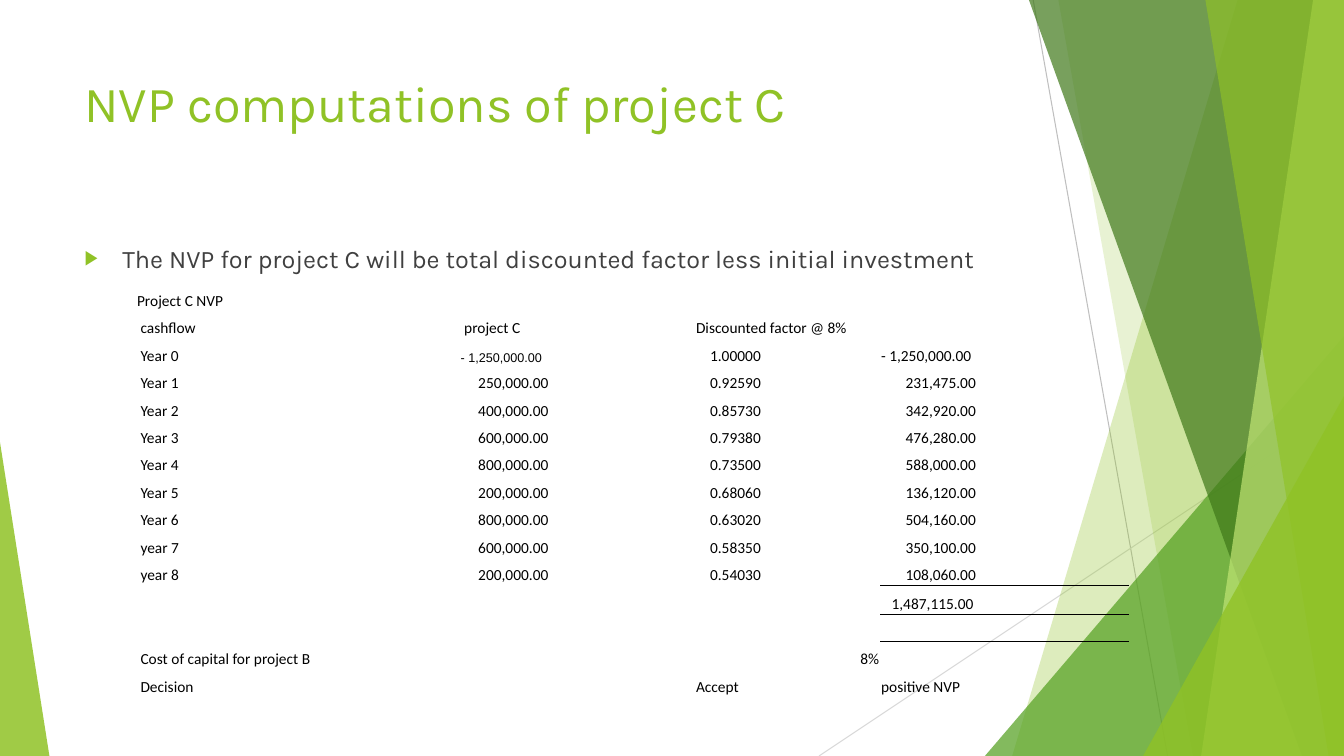
from lxml.etree import SubElement
from pptx import Presentation
from pptx.dml.color import RGBColor
from pptx.enum.shapes import MSO_CONNECTOR as CONN, MSO_SHAPE as SHAPE
from pptx.enum.text import MSO_ANCHOR as ANCHOR, PP_ALIGN as ALIGN
from pptx.oxml.ns import qn
from pptx.util import Pt

COLORS = {
    "lime": "90C226", "green": "54A021", "forest": "3F7819", "pale": "C0E474",
    "text": "404040", "black": "000000", "line": "BFBFBF", "soft_line": "D9D9D9",
}
W, H = 960, 540
NO_GRID = "{2D5ABB26-0587-4C30-8999-92F81FD0307C}"
SPACE = 2.5


class SlideBuilder:
    def __init__(self, prs, font="Karla", table_font="Calibri"):
        self.slide = prs.slides.add_slide(prs.slide_layouts[6])
        self.shapes = self.slide.shapes
        self.font, self.table_font = font, table_font

    def rgb(self, color):
        return RGBColor.from_string(COLORS[color])

    def style_runs(self, p, size, color, font):
        for r in p.runs:
            r.font.size, r.font.name = Pt(size), font
            r.font.color.rgb = self.rgb(color)

    def paint(self, sp, color, alpha):
        sp.shadow.inherit = False
        sp.fill.solid()
        sp.fill.fore_color.rgb = self.rgb(color)
        sp.line.fill.background()
        clr = sp.fill._xPr.find(qn("a:solidFill"))[0]
        SubElement(clr, qn("a:alpha"), val=str(alpha * 1000))

    def line(self, x1, y1, x2, y2, color):
        cn = self.shapes.add_connector(CONN.STRAIGHT, Pt(x1), Pt(y1), Pt(x2), Pt(y2))
        cn.line.color.rgb = self.rgb(color)
        cn.line.width = Pt(0.75)
        SubElement(cn._element.spPr, qn("a:effectLst"))

    def band(self, top_x, bottom_x, color, alpha):
        fb = self.shapes.build_freeform(top_x, 0, scale=Pt(1))
        fb.add_line_segments([(W, 0), (W, H), (bottom_x, H)], close=True)
        self.paint(fb.convert_to_shape(), color, alpha)

    def triangle(self, x, y, w, apex, color, alpha):
        sp = self.shapes.add_shape(SHAPE.ISOSCELES_TRIANGLE, Pt(x), Pt(y), Pt(w), Pt(H - y))
        sp.adjustments[0] = apex
        self.paint(sp, color, alpha)

    def text(self, x, y, w, h, text, size, color, bullet=None):
        tf = self.shapes.add_textbox(Pt(x), Pt(y), Pt(w), Pt(h)).text_frame
        tf.word_wrap = True
        p = tf.paragraphs[0]
        p.text = text
        if bullet:
            pPr = p._p.get_or_add_pPr()
            pPr.set("marL", str(Pt(27)))
            pPr.set("indent", str(Pt(-27)))
            SubElement(SubElement(pPr, qn("a:buClr")), qn("a:srgbClr"), val=COLORS["lime"])
            SubElement(pPr, qn("a:buSzPct"), val="80000")
            SubElement(pPr, qn("a:buFont"), typeface="Arial")
            SubElement(pPr, qn("a:buChar"), char=bullet)
        self.style_runs(p, size, color, self.font)

    def table(self, x, y, widths, heights):
        frame = self.shapes.add_table(len(heights), len(widths), Pt(x), Pt(y),
                                      Pt(sum(widths)), Pt(sum(heights)))
        tbl = frame.table
        tbl.first_row = tbl.horz_banding = False
        tbl._tbl.tblPr.find(qn("a:tableStyleId")).text = NO_GRID
        for col, w in zip(tbl.columns, widths):
            col.width = Pt(w)
        for row, h in zip(tbl.rows, heights):
            row.height = Pt(h)
            for cell in row.cells:
                self.cell(cell)
        return tbl

    def cell(self, cell, text="", indent=0, size=11, font=None, align=ALIGN.LEFT):
        cell.fill.background()
        cell.vertical_anchor = ANCHOR.BOTTOM
        cell.margin_left = Pt(0.7 + indent * SPACE)
        cell.margin_right = cell.margin_top = Pt(0.7)
        cell.margin_bottom = 0
        p = cell.text_frame.paragraphs[0]
        p.text, p.alignment = text, align
        p._p.get_or_add_endParaRPr().set("sz", str(size * 100))
        self.style_runs(p, size, "black", font or self.table_font)

    def border(self, cell, side, width):
        tcPr = cell._tc.get_or_add_tcPr()
        ln = tcPr.makeelement(qn(f"a:ln{side}"), {"w": str(Pt(width))})
        fill = SubElement(ln, qn("a:solidFill"))
        SubElement(fill, qn("a:srgbClr"), val=COLORS["black"])
        tcPr.insert(len(tcPr.findall(qn("a:lnT"))), ln)


def add_background(sb):
    sb.line(738, 0, 834, H, "line")
    sb.line(W, 290, 585, H, "soft_line")
    sb.band(884, 723, "lime", 30)
    sb.band(756, 852, "lime", 20)
    sb.triangle(703.5, 240, 256.5, 1, "green", 72)
    sb.band(735, 929.5, "forest", 70)
    sb.band(938, 858, "pale", 70)
    sb.band(861, 949, "lime", 65)
    sb.triangle(816.5, 283, 143.5, 1, "lime", 80)
    sb.triangle(0, 316, 35.3, 0, "lime", 85)


def add_npv_table(sb):
    years = [
        ("Year 1", "250,000.00", "0.92590", "231,475.00"),
        ("Year 2", "400,000.00", "0.85730", "342,920.00"),
        ("Year 3", "600,000.00", "0.79380", "476,280.00"),
        ("Year 4", "800,000.00", "0.73500", "588,000.00"),
        ("Year 5", "200,000.00", "0.68060", "136,120.00"),
        ("Year 6", "800,000.00", "0.63020", "504,160.00"),
        ("year 7", "600,000.00", "0.58350", "350,100.00"),
        ("year 8", "200,000.00", "0.54030", "108,060.00"),
    ]
    heights = [19.6] * 11 + [20.9] + [19.6] * 3
    tbl = sb.table(97.2, 202.3, [231.2, 165.6, 134.7, 177.9], heights)
    tbl.cell(1, 2).merge(tbl.cell(1, 3))
    tbl.cell(13, 0).merge(tbl.cell(13, 1))

    sb.cell(tbl.cell(0, 0), "Project C NVP")
    for c, text in enumerate(("cashflow", "project C", "Discounted factor @ 8%")):
        sb.cell(tbl.cell(1, c), text, 1)
    sb.cell(tbl.cell(2, 0), "Year 0", 1)
    sb.cell(tbl.cell(2, 1), "- 1,250,000.00", size=9, font="Arial")
    sb.cell(tbl.cell(2, 2), "1.00000", 5)
    sb.cell(tbl.cell(2, 3), "- 1,250,000.00")
    for r, values in enumerate(years, 3):
        for c, (text, indent) in enumerate(zip(values, (1, 5, 5, 7))):
            sb.cell(tbl.cell(r, c), text, indent)
    sb.cell(tbl.cell(11, 3), "1,487,115.00", 3)
    sb.cell(tbl.cell(13, 0), "Cost of capital for project B", 1)
    sb.cell(tbl.cell(13, 2), "8%", align=ALIGN.RIGHT)
    sb.cell(tbl.cell(14, 0), "Decision", 1)
    sb.cell(tbl.cell(14, 2), "Accept", 1)
    sb.cell(tbl.cell(14, 3), "positive NVP")

    for row, side, width in ((10, "B", 0.5), (11, "T", 0.5), (11, "B", 1), (12, "T", 1)):
        sb.border(tbl.cell(row, 3), side, width)


def main():
    prs = Presentation()
    prs.slide_width, prs.slide_height = Pt(W), Pt(H)
    sb = SlideBuilder(prs)
    add_background(sb)
    sb.text(53.3, 48, 677, 104, "NVP computations of project C", 36, "lime")
    sb.text(53.3, 170, 677, 305,
            "The NVP for project C will be total discounted factor less initial investment",
            18, "text", bullet="▶")
    add_npv_table(sb)
    prs.save("out.pptx")


if __name__ == "__main__":
    main()
